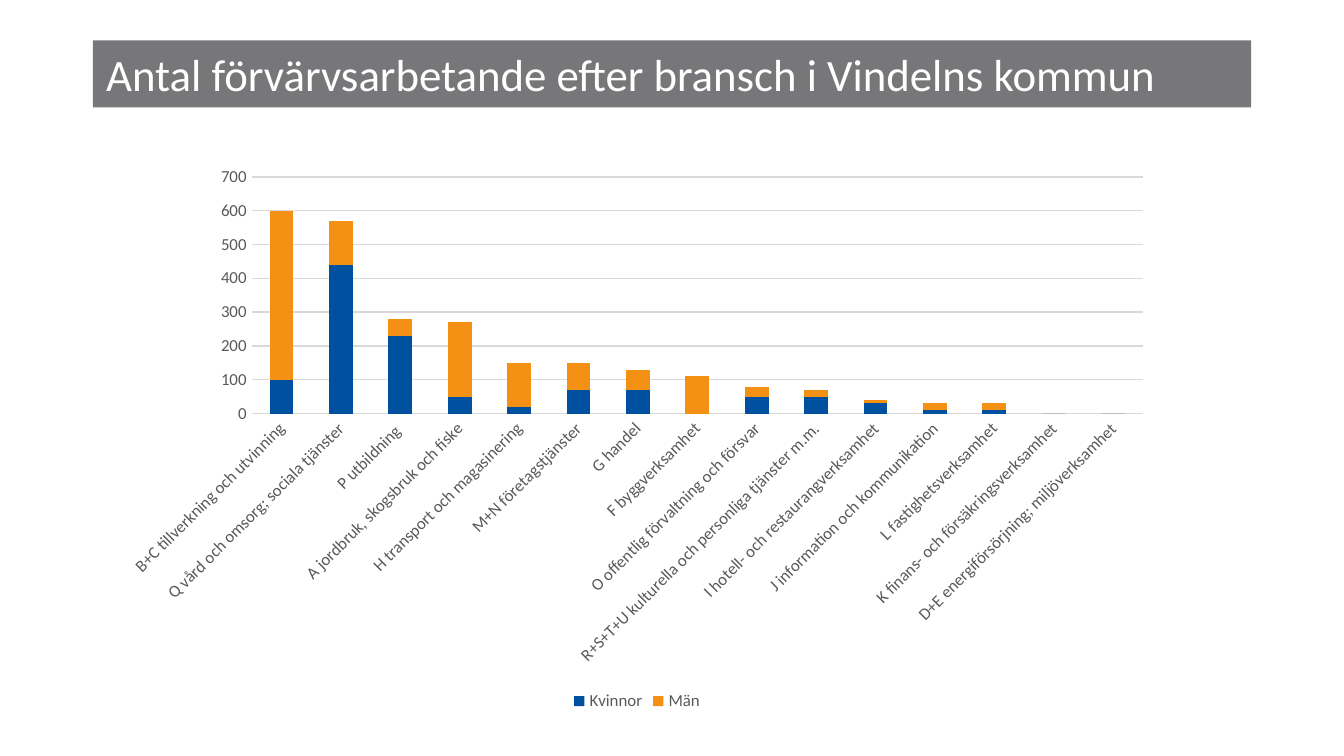
from dataclasses import dataclass

import pptx
import pptx.chart.data
import pptx.dml.color
import pptx.enum.chart
import pptx.enum.text
import pptx.util

Inches = pptx.util.Inches
Pt = pptx.util.Pt


@dataclass(frozen=True)
class Theme:
    """Colours, font and type sizes of the slide."""
    font: str = "Calibri"
    banner: str = "77777A"
    heading: str = "FFFFFF"
    label: str = "595959"
    rule: str = "D9D9D9"
    women: str = "0050A0"
    men: str = "F49014"
    heading_size: float = 24
    label_size: float = 9
    rule_width: float = 0.75


THEME = Theme()
HEADING = "Antal förvärvsarbetande efter bransch i Vindelns kommun"
EMPLOYED = [
    ("B+C tillverkning och utvinning", 100, 500),
    ("Q vård och omsorg; sociala tjänster", 440, 130),
    ("P utbildning ", 230, 50),
    ("A jordbruk, skogsbruk och fiske", 50, 220),
    ("H transport och magasinering", 20, 130),
    ("M+N företagstjänster", 70, 80),
    ("G handel", 70, 60),
    ("F byggverksamhet", 0, 110),
    ("O offentlig förvaltning och försvar", 50, 30),
    ("R+S+T+U kulturella och personliga tjänster m.m.", 50, 20),
    ("I hotell- och restaurangverksamhet", 30, 10),
    ("J information och kommunikation", 10, 20),
    ("L fastighetsverksamhet", 10, 20),
    ("K finans- och försäkringsverksamhet", 0, 0),
    ("D+E energiförsörjning; miljöverksamhet", 0, 0),
]


def rgb(value):
    """Return the colour object for a hex value."""
    return pptx.dml.color.RGBColor.from_string(value)


def style_font(font, size, colour):
    """Set typeface, size and colour of a font."""
    font.name = THEME.font
    font.size = Pt(size)
    font.color.rgb = rgb(colour)


def style_rule(line):
    """Draw a line as a thin chart rule."""
    line.color.rgb = rgb(THEME.rule)
    line.width = Pt(THEME.rule_width)


def place_heading(slide, left, top, width, height):
    """Fill the title placeholder as a banner in the given box."""
    banner = slide.shapes.title
    banner.left, banner.top = Inches(left), Inches(top)
    banner.width, banner.height = Inches(width), Inches(height)
    banner.fill.solid()
    banner.fill.fore_color.rgb = rgb(THEME.banner)
    frame = banner.text_frame
    frame.word_wrap = True
    frame.auto_size = pptx.enum.text.MSO_AUTO_SIZE.NONE
    frame.vertical_anchor = pptx.enum.text.MSO_ANCHOR.MIDDLE
    heading = frame.paragraphs[0]
    heading.alignment = pptx.enum.text.PP_ALIGN.LEFT
    run = heading.add_run()
    run.text = HEADING
    style_font(run.font, THEME.heading_size, THEME.heading)


def place_employment_chart(slide, left, top, width, height):
    """Draw the stacked columns of women and men by industry."""
    industries, women, men = zip(*EMPLOYED)
    employment = pptx.chart.data.CategoryChartData(number_format="0")
    employment.categories = industries
    employment.add_series("Kvinnor", women)
    employment.add_series("Män", men)
    chart = slide.shapes.add_chart(
        pptx.enum.chart.XL_CHART_TYPE.COLUMN_STACKED,
        Inches(left), Inches(top), Inches(width), Inches(height), employment,
    ).chart
    style_font(chart.font, THEME.label_size, THEME.label)
    chart.has_title = False
    chart.has_legend = True
    chart.legend.position = pptx.enum.chart.XL_LEGEND_POSITION.BOTTOM
    chart.legend.include_in_layout = False
    style_font(chart.legend.font, THEME.label_size, THEME.label)

    columns = chart.plots[0]
    columns.gap_width = 150
    columns.overlap = 100
    columns.vary_by_categories = False
    for gender, colour in zip(columns.series, (THEME.women, THEME.men)):
        gender.format.fill.solid()
        gender.format.fill.fore_color.rgb = rgb(colour)

    for axis in (chart.category_axis, chart.value_axis):
        axis.major_tick_mark = pptx.enum.chart.XL_TICK_MARK.NONE
        axis.minor_tick_mark = pptx.enum.chart.XL_TICK_MARK.NONE
        style_font(axis.tick_labels.font, THEME.label_size, THEME.label)
    style_rule(chart.category_axis.format.line)
    chart.category_axis.has_major_gridlines = False
    industry_labels = chart.category_axis.tick_labels.font
    industry_labels._element.getparent().getparent().getparent().bodyPr.set("rot", "-2700000")

    counts = chart.value_axis
    counts.minimum_scale, counts.maximum_scale, counts.major_unit = 0, 700, 100
    counts.format.line.fill.background()
    counts.has_major_gridlines = True
    style_rule(counts.major_gridlines.format.line)
    counts.tick_labels.number_format = "0"
    counts.tick_labels.number_format_is_linked = False


def main():
    """Build and save the slide."""
    deck = pptx.Presentation()
    deck.slide_width = Inches(10)
    deck.slide_height = deck.slide_width * 9 // 16
    slide = deck.slides.add_slide(deck.slide_layouts[5])
    place_heading(slide, 0.69, 0.3, 8.62, 0.5)
    place_employment_chart(slide, 0.82, 1.16, 7.84, 4.17)
    deck.save("out.pptx")


if __name__ == "__main__":
    main()
